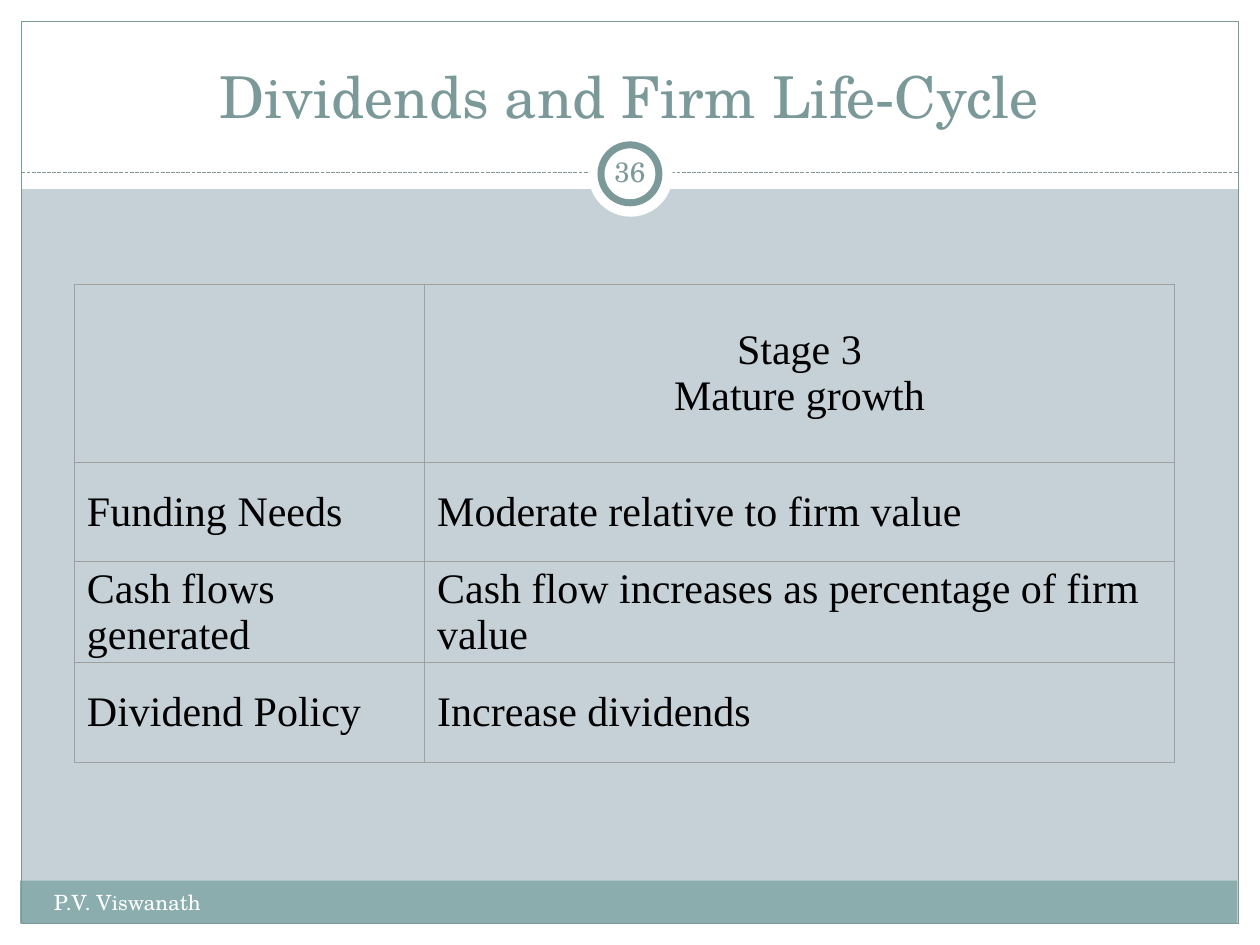
from typing import NamedTuple, Optional

from lxml.etree import SubElement
from pptx import Presentation
from pptx.dml.color import RGBColor
from pptx.enum.dml import MSO_LINE
from pptx.enum.shapes import MSO_CONNECTOR, MSO_SHAPE
from pptx.enum.text import MSO_ANCHOR, PP_ALIGN
from pptx.oxml import parse_xml
from pptx.oxml.ns import nsdecls, qn
from pptx.util import Inches, Pt

COLOURS = {
    "background": "C5D1D7",
    "white": "FFFFFF",
    "band": "8CADAE",
    "accent": "7C999A",
    "grid": "A0A0A0",
    "black": "000000",
}
HEADING_FONT = "TeX Gyre Schola"
TABLE_FONT = "Times New Roman"
WIDTH, HEIGHT, MARGIN = 10, 7.5, 0.17


class Panel(NamedTuple):
    left: float
    top: float
    width: float
    height: float
    fill: Optional[str] = None
    line: Optional[str] = None
    weight: float = 0.75
    kind: MSO_SHAPE = MSO_SHAPE.RECTANGLE


PANELS = [
    Panel(0, HEIGHT - MARGIN, WIDTH, MARGIN, "white"),
    Panel(0, 0, WIDTH, 1.5, "white"),
    Panel(0, 0, MARGIN, HEIGHT, "white"),
    Panel(WIDTH - MARGIN, 0, MARGIN, HEIGHT, "white"),
    Panel(0.16, 6.99, 9.66, 0.34, "band"),
    Panel(MARGIN, MARGIN, WIDTH - 2 * MARGIN, HEIGHT - 2 * MARGIN, line="accent"),
]
BADGE = [
    Panel(4.67, 1.05, 0.67, 0.67, "white", kind=MSO_SHAPE.OVAL),
    Panel(4.77, 1.15, 0.46, 0.46, "white", "accent", 4, MSO_SHAPE.OVAL),
]
TABLE_ROWS = [
    ("", "Stage 3\vMature growth"),
    ("Funding Needs", "Moderate relative to firm value"),
    ("Cash flows generated", "Cash flow increases as percentage of firm value"),
    ("Dividend Policy", "Increase dividends"),
]
COLUMN_WIDTHS = (2.78, 5.95)
ROW_HEIGHTS = (1.41, 0.79, 0.79, 0.79)


def colour(name: str) -> RGBColor:
    return RGBColor.from_string(COLOURS[name])


def draw_panel(page, panel: Panel) -> None:
    shape = page.shapes.add_shape(
        panel.kind, *(Inches(length) for length in panel[:4]))
    shape.shadow.inherit = False
    if panel.fill:
        shape.fill.solid()
        shape.fill.fore_color.rgb = colour(panel.fill)
    else:
        shape.fill.background()
    if panel.line:
        shape.line.color.rgb = colour(panel.line)
        shape.line.width = Pt(panel.weight)
    else:
        shape.line.fill.background()


def draw_divider(page, top: float) -> None:
    divider = page.shapes.add_connector(
        MSO_CONNECTOR.STRAIGHT, Inches(MARGIN), Inches(top),
        Inches(WIDTH - MARGIN), Inches(top))
    divider.line.color.rgb = colour("accent")
    divider.line.width = Pt(0.75)
    divider.line.dash_style = MSO_LINE.SQUARE_DOT
    SubElement(divider._element.spPr, qn("a:effectLst"))


def write(frame, text: str, *, size: float, font: str, ink: str,
          align: PP_ALIGN = PP_ALIGN.LEFT) -> None:
    para = frame.paragraphs[0]
    para.text = text
    para.alignment = align
    for span in para.runs:
        span.font.size = Pt(size)
        span.font.name = font
        span.font.color.rgb = colour(ink)


def add_text(page, text: str, left: float, top: float, width: float, height: float,
             *, anchor: MSO_ANCHOR = MSO_ANCHOR.TOP, inset: Optional[float] = None,
             **text_format) -> None:
    box = page.shapes.add_textbox(
        Inches(left), Inches(top), Inches(width), Inches(height))
    frame = box.text_frame
    frame.word_wrap = True
    frame.vertical_anchor = anchor
    if inset is not None:
        frame.margin_left = frame.margin_right = Inches(inset)
        frame.margin_top = frame.margin_bottom = Inches(inset)
    write(frame, text, font=HEADING_FONT, **text_format)


def set_borders(cell, outer: dict[str, bool]) -> None:
    """Draw the sides marked as outer heavier than the inner grid lines."""
    properties = cell._tc.get_or_add_tcPr()
    for position, (side, is_outer) in enumerate(outer.items()):
        weight = Pt(1 if is_outer else 0.5)
        properties.insert(position, parse_xml(
            f'<a:ln{side} {nsdecls("a")} w="{weight}"><a:solidFill>'
            f'<a:srgbClr val="{COLOURS["grid"]}"/></a:solidFill></a:ln{side}>'))


def draw_table(page, left: float, top: float) -> None:
    last_row, last_column = len(ROW_HEIGHTS) - 1, len(COLUMN_WIDTHS) - 1
    table = page.shapes.add_table(
        len(ROW_HEIGHTS), len(COLUMN_WIDTHS), Inches(left), Inches(top),
        Inches(sum(COLUMN_WIDTHS)), Inches(sum(ROW_HEIGHTS))).table
    table.first_row = table.horz_banding = False
    for column, width in zip(table.columns, COLUMN_WIDTHS):
        column.width = Inches(width)
    for r, (height, texts) in enumerate(zip(ROW_HEIGHTS, TABLE_ROWS)):
        table.rows[r].height = Inches(height)
        for c, text in enumerate(texts):
            cell = table.cell(r, c)
            cell.fill.background()
            cell.vertical_anchor = MSO_ANCHOR.MIDDLE
            cell.margin_top = cell.margin_bottom = Inches(0)
            set_borders(cell, {"L": c == 0, "R": c == last_column,
                               "T": r == 0, "B": r == last_row})
            write(cell.text_frame, text, size=24, font=TABLE_FONT, ink="black",
                  align=PP_ALIGN.CENTER if r == 0 else PP_ALIGN.LEFT)


def main() -> None:
    deck = Presentation()
    deck.slide_width, deck.slide_height = Inches(WIDTH), Inches(HEIGHT)
    page = deck.slides.add_slide(deck.slide_layouts[6])
    page.background.fill.solid()
    page.background.fill.fore_color.rgb = colour("background")

    for panel in PANELS:
        draw_panel(page, panel)
    draw_divider(page, 1.37)
    for panel in BADGE:
        draw_panel(page, panel)

    add_text(page, "P.V. Viswanath", 0.33, 7.01, 3.92, 0.4, size=12, ink="white")
    add_text(page, "36", 4.75, 1.12, 0.5, 0.48, size=16, ink="accent",
             align=PP_ALIGN.CENTER, anchor=MSO_ANCHOR.MIDDLE, inset=0.05)
    add_text(page, "Dividends and Firm Life-Cycle", 0.33, 0.25, 9.33, 0.83,
             size=33, ink="accent", align=PP_ALIGN.CENTER, anchor=MSO_ANCHOR.BOTTOM)
    draw_table(page, 0.59, 2.26)
    deck.save("out.pptx")


if __name__ == "__main__":
    main()
